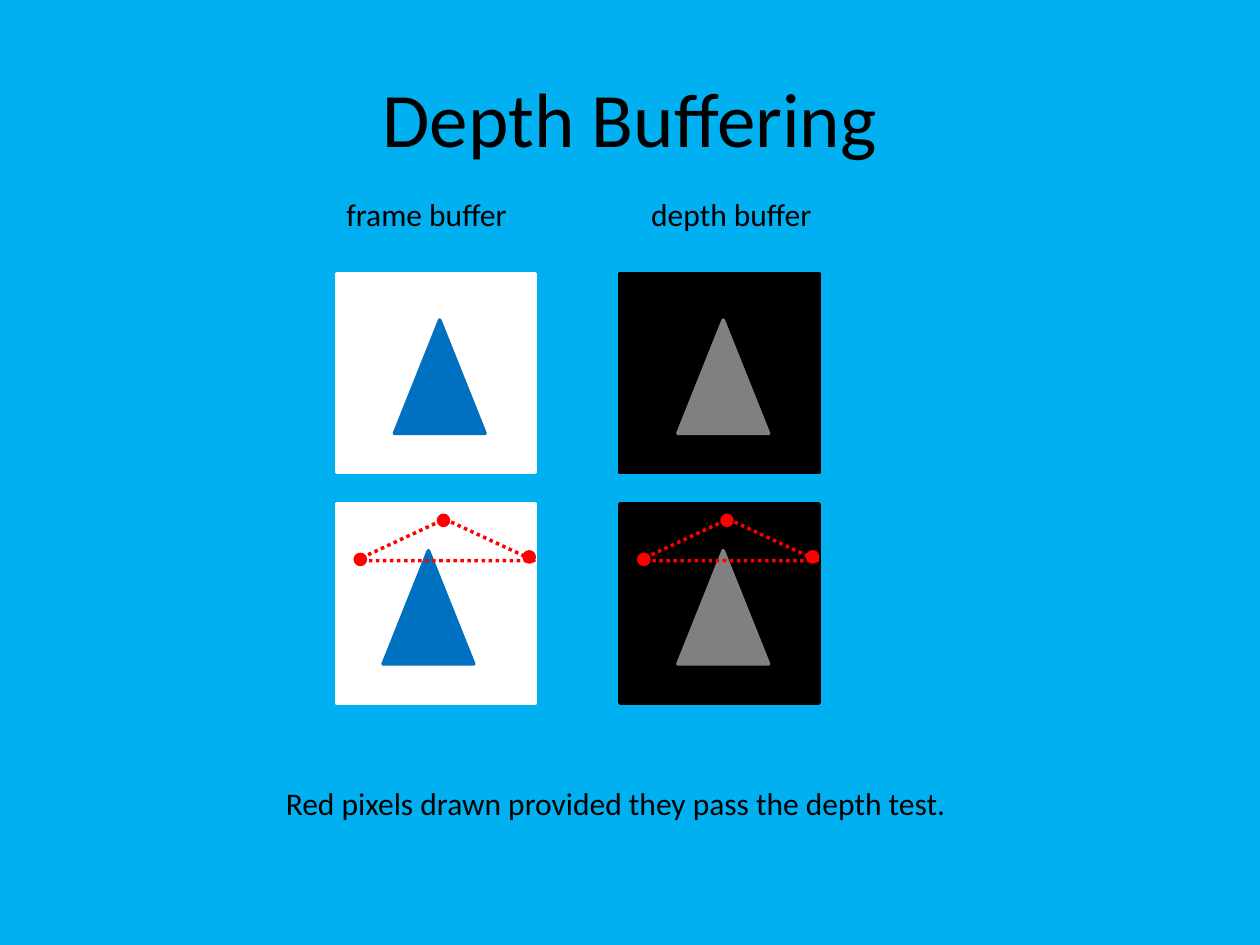
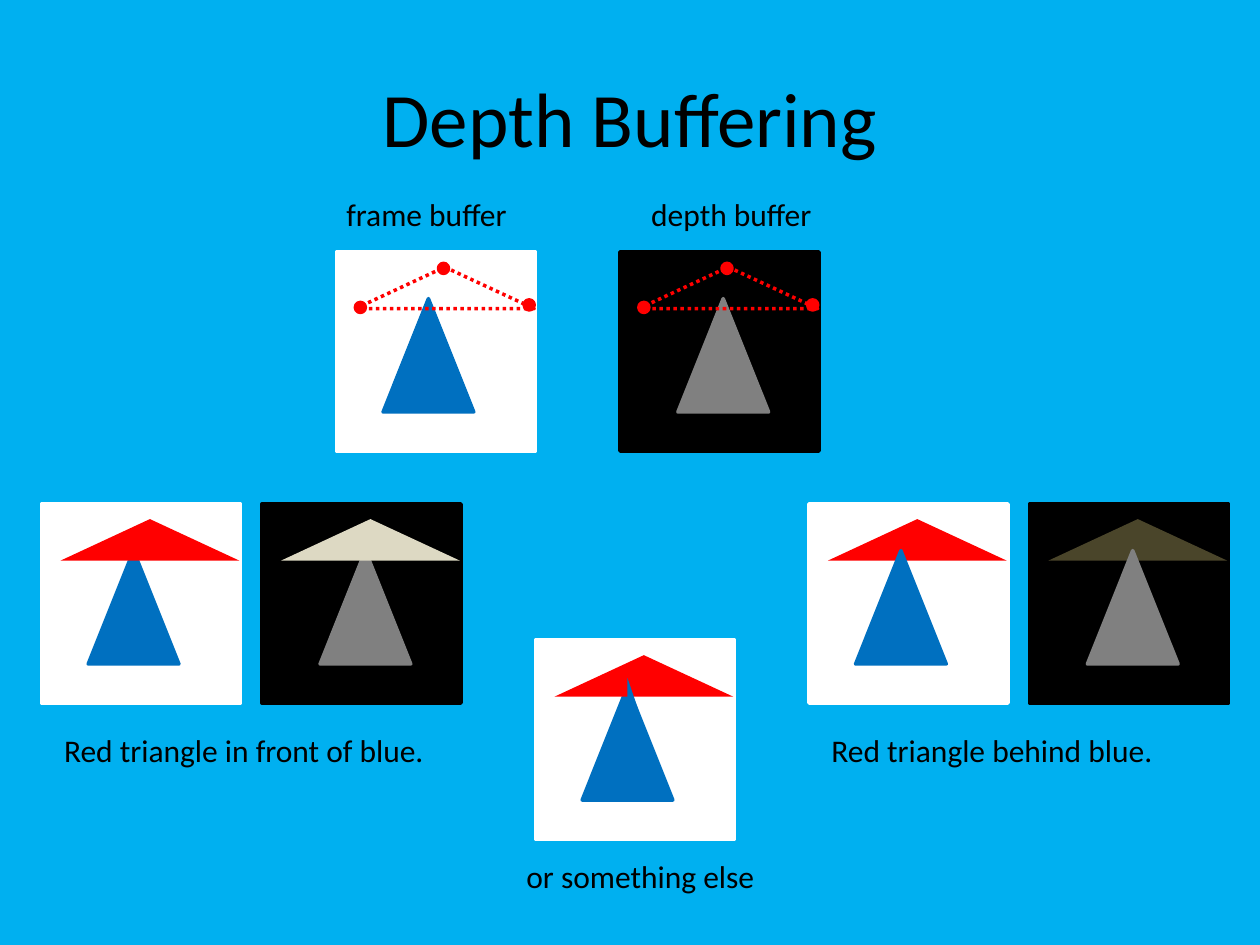
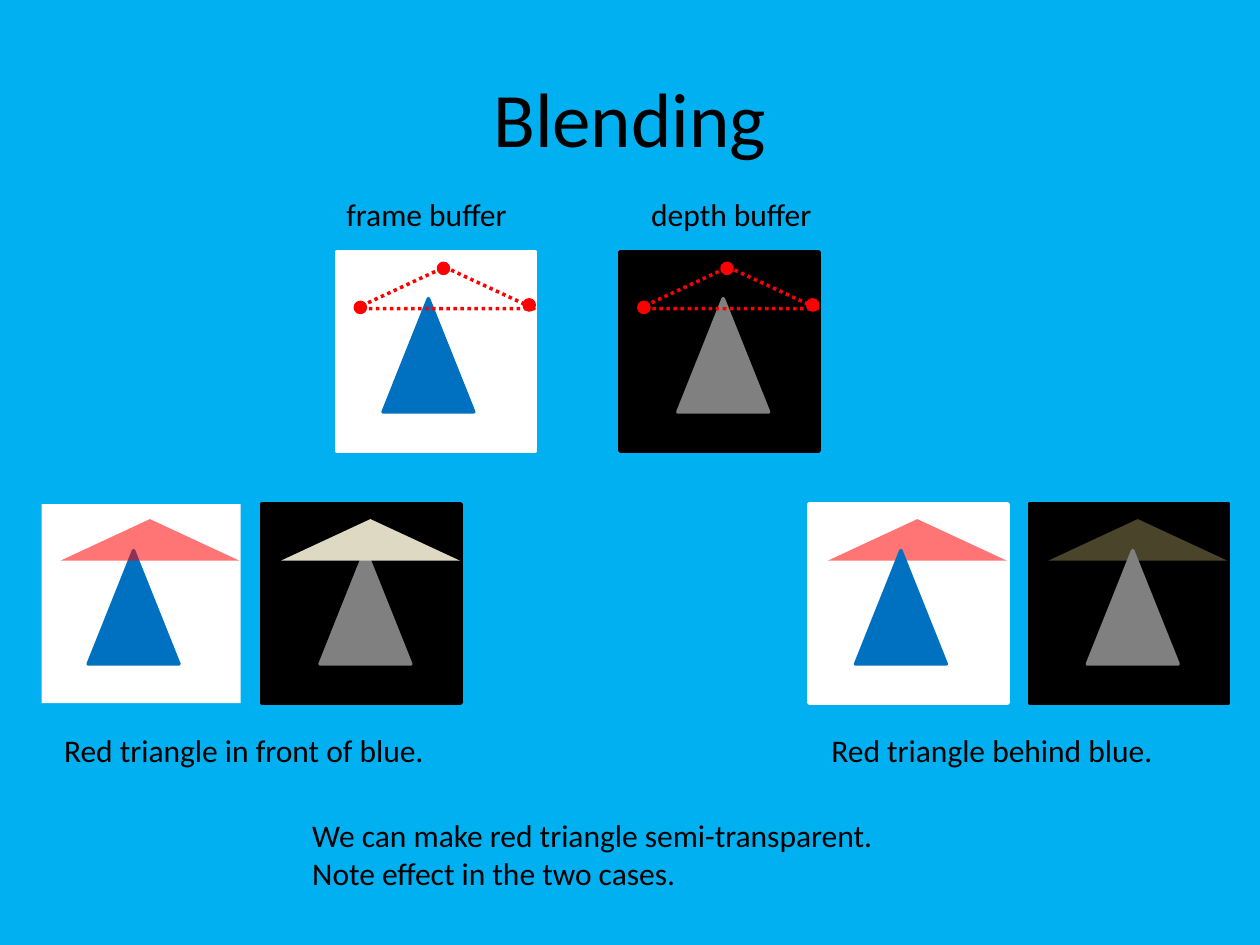
from lxml import etree
from pptx import Presentation
from pptx import util as u
from pptx.dml import color
from pptx.enum import dml, shapes, text
from pptx.oxml import ns

BACKGROUND, INK = "00B0F0", "000000"
WHITE, BLACK, BLUE, GRAY, RED = "FFFFFF", "000000", "0070C0", "808080", "FF0000"
NEAR, FAR = "DDD9C3", "4A452A"  # depth values of the red triangle

FONT = "Calibri"
PANEL = 1.58
TALL_SIZE = (0.72, 0.9)
WIDE_BOX = (0.15, 0.12, 1.42, 0.33)
DOT_SIZE = 0.08
DOT_CORNERS = [(0.15, 0.4), (0.81, 0.09), (1.49, 0.38)]
FRAME_LEFT, DEPTH_LEFT = 2.67, 4.92
PAIR_STEP = 1.75
PAIR_TOP = 4
TALL_FRAME, TALL_DEPTH = 0.37, 0.46  # left inset of the tall triangle


def rgb(hex_string):
    return color.RGBColor.from_string(hex_string)


def set_attributes(target, values):
    for name, value in values.items():
        setattr(target, name, value)


def set_font(font, size):
    set_attributes(font, {"name": FONT, "size": u.Pt(size)})
    font.color.rgb = rgb(INK)


def add_figure(parent, kind, box, fill=None, line=None, dash=None, alpha=None):
    """Add a preset shape; fill or line None means none."""
    shape = parent.shapes.add_shape(kind, *map(u.Inches, box))
    shape.shadow.inherit = False
    if fill:
        shape.fill.solid()
        shape.fill.fore_color.rgb = rgb(fill)
    else:
        shape.fill.background()
    if alpha:
        fill_color = shape.fill._xPr.find(".//" + ns.qn("a:srgbClr"))
        etree.SubElement(fill_color, ns.qn("a:alpha"), val=str(alpha * 1000))
    if line:
        shape.line.color.rgb = rgb(line)
        set_attributes(shape.line, {"width": u.Pt(2), "dash_style": dash})
    else:
        shape.line.fill.background()
    return shape


def add_label(slide, left, top, width, *lines):
    height = 0.4 if len(lines) == 1 else 0.71
    box = slide.shapes.add_textbox(*map(u.Inches, (left, top, width, height)))
    frame = box.text_frame
    set_attributes(frame, {"text": "\n".join(lines), "word_wrap": False,
                           "auto_size": text.MSO_AUTO_SIZE.SHAPE_TO_FIT_TEXT})
    for paragraph in frame.paragraphs:
        set_font(paragraph.runs[0].font, 18)


# Buffer panels

def add_buffer(slide, left, top, depth=False, inset=None, wide=None,
               behind=False, alpha=None, edged=True):
    """Panel with a tall triangle and, if wide is a colour, a wide one."""
    group = slide.shapes.add_group_shape()
    triangle = shapes.MSO_SHAPE.ISOSCELES_TRIANGLE
    ground, tall = (BLACK, GRAY) if depth else (WHITE, BLUE)
    if inset is None:
        inset = TALL_DEPTH if depth else TALL_FRAME
    add_figure(group, shapes.MSO_SHAPE.RECTANGLE, (left, top, PANEL, PANEL),
               ground, ground if edged else None)

    def add_wide():
        x, y, width, height = WIDE_BOX
        add_figure(group, triangle, (left + x, top + y, width, height), wide, alpha=alpha)

    if wide and behind:
        add_wide()
    add_figure(group, triangle, (left + inset, top + 0.37, *TALL_SIZE), tall, tall)
    if wide and not behind:
        add_wide()
    return group


def add_dotted_outline(slide, left, top):
    group = slide.shapes.add_group_shape()
    x, y, width, height = WIDE_BOX
    add_figure(group, shapes.MSO_SHAPE.ISOSCELES_TRIANGLE,
               (left + x, top + y, width, height),
               line=RED, dash=dml.MSO_LINE.ROUND_DOT)
    for x, y in DOT_CORNERS:
        add_figure(group, shapes.MSO_SHAPE.OVAL,
                   (left + x, top + y, DOT_SIZE, DOT_SIZE), RED, RED)


def add_buffer_row(slide, top, outlined=True, frame_inset=None):
    """Frame buffer and depth buffer, side by side below their labels."""
    add_buffer(slide, FRAME_LEFT, top, inset=frame_inset)
    add_buffer(slide, DEPTH_LEFT, top, depth=True)
    if outlined:
        for left in (FRAME_LEFT, DEPTH_LEFT):
            add_dotted_outline(slide, left, top)


def add_result_pair(slide, left, caption, caption_width, behind, alpha=None, edged=True):
    """Both buffers after the red triangle is drawn, with a caption."""
    add_buffer(slide, left, PAIR_TOP, wide=RED, behind=behind, alpha=alpha, edged=edged)
    add_buffer(slide, left + PAIR_STEP, PAIR_TOP, depth=True,
               wide=FAR if behind else NEAR, behind=behind)
    add_label(slide, left + 0.08, PAIR_TOP + 1.75, caption_width, caption)


def add_result_pairs(slide, alpha=None, front_edged=True):
    add_result_pair(slide, 0.33, "Red triangle in front of blue.", 3.09,
                    False, alpha, front_edged)
    add_result_pair(slide, 6.42, "Red triangle behind blue.", 2.79, True, alpha)


def add_intersecting_case(slide, left, top):
    group = add_buffer(slide, left, top, wide=RED)
    add_figure(group, shapes.MSO_SHAPE.RIGHT_TRIANGLE,
               (left + 0.73, top + 0.3, 0.17, 0.5), BLUE)
    add_label(slide, left - 0.17, top + 1.67, 2.03, "or something else")


# Slides

def add_slide(presentation, title):
    slide = presentation.slides.add_slide(presentation.slide_layouts[5])
    placeholder = slide.shapes.title
    box = dict(zip(("left", "top", "width", "height"),
                   map(u.Inches, (0.5, 0.3, 9, 1.25))))
    set_attributes(placeholder, box)
    frame = placeholder.text_frame
    set_attributes(frame, {"text": title, "vertical_anchor": text.MSO_ANCHOR.MIDDLE})
    frame.paragraphs[0].alignment = text.PP_ALIGN.CENTER
    set_font(frame.paragraphs[0].runs[0].font, 44)
    add_label(slide, 2.65, 1.5, 1.49, "frame buffer")
    add_label(slide, 5.07, 1.5, 1.49, "depth buffer")
    return slide


def build_depth_test(presentation):
    slide = add_slide(presentation, "Depth Buffering")
    add_buffer_row(slide, 2.17, outlined=False, frame_inset=TALL_DEPTH)
    add_buffer_row(slide, 4)
    add_label(slide, 2.17, 6.17, 5.5,
              "Red pixels drawn provided they pass the depth test.")


def build_depth_results(presentation):
    slide = add_slide(presentation, "Depth Buffering")
    add_buffer_row(slide, 2)
    add_result_pairs(slide)
    add_intersecting_case(slide, 4.25, 5.08)


def build_blending(presentation):
    slide = add_slide(presentation, "Blending")
    add_buffer_row(slide, 2)
    add_result_pairs(slide, alpha=54, front_edged=False)
    add_label(slide, 2.38, 6.43, 4.73,
              "We can make red triangle semi-transparent.",
              "Note effect in the two cases.")


def main():
    presentation = Presentation()
    set_attributes(presentation, {"slide_width": u.Inches(10),
                                  "slide_height": u.Inches(7.5)})
    background = presentation.slide_master.background.fill
    background.solid()
    background.fore_color.rgb = rgb(BACKGROUND)
    build_depth_test(presentation)
    build_depth_results(presentation)
    build_blending(presentation)
    presentation.save("out.pptx")


if __name__ == "__main__":
    main()
